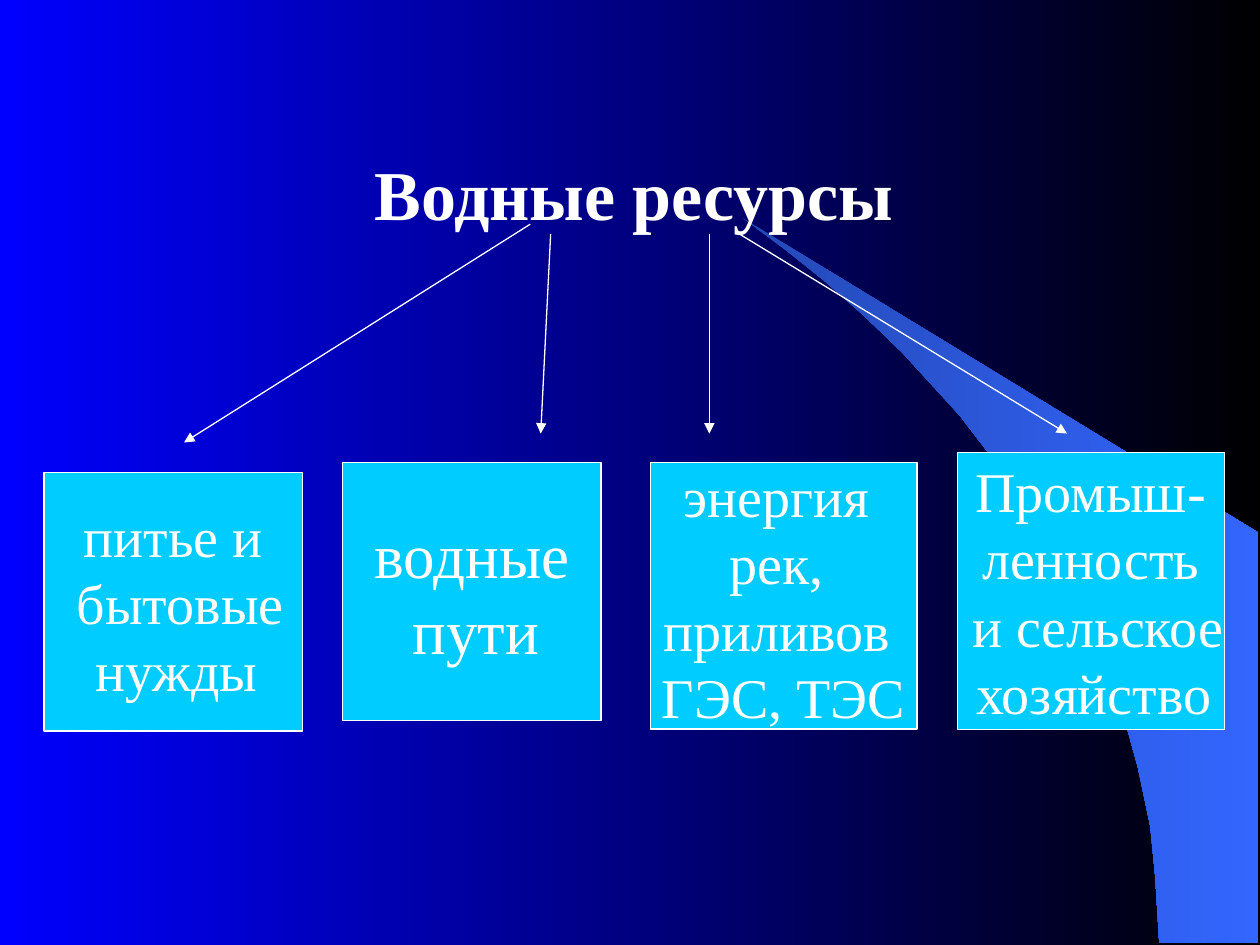
"""Build a slide that shows the four uses of water resources."""
from lxml import etree
from pptx import Presentation
from pptx import util as u
from pptx.dml.color import RGBColor
from pptx.enum import shapes, text
from pptx.oxml import ns

COLORS = {
    "white": "FFFFFF",
    "box": "00CCFF",
    "sky": "0000FF",
    "night": "000000",
    "arc_start": "2449B6",
    "arc_end": "3366FF",
}
FONT = "Times New Roman"
ARC = [
    (23.37, 19), (25.37, 19.02), (25.37, 10.74), (14.96, 4.39), (15.85, 5.05),
    (16.59, 5.64), (17.4, 6.35), (18.19, 7.11), (19.35, 8.38), (20.4, 9.75),
    (21.13, 10.95), (21.79, 12.17), (22.3, 13.41), (22.68, 14.53),
    (22.94, 15.47), (23.19, 16.66), (23.29, 17.68),
]
BOXES = [
    ((0.89, 9.53, 5.21, 5.21), 32, ["питье и", " бытовые", " нужды"], " "),
    ((19.3, 9.12, 5.38, 5.59), 32,
     ["Промыш-", "ленность", " и сельское", " хозяйство"], " "),
    ((6.91, 9.32, 5.21, 5.21), 36, ["водные", " пути"], " "),
    ((13.11, 9.32, 5.38, 5.38), 32,
     ["энергия ", "рек, ", "приливов ", "ГЭС, ТЭС"], ""),
]
ARROWS = [
    (10.69, 4.52, 3.71, 8.92),
    (11.1, 4.72, 10.9, 8.74),
    (14.3, 4.72, 14.3, 8.74),
    (14.91, 4.72, 21.51, 8.74),
]


def color(name):
    """Return the named colour."""
    return RGBColor.from_string(COLORS[name])


def lengths(values):
    """Turn centimetres into slide lengths."""
    return [u.Cm(value) for value in values]


def set_gradient(fill, start, end):
    """Fill from left to right between two named colours."""
    fill.gradient()
    fill.gradient_angle = 0
    for stop, name, position in zip(fill.gradient_stops, (start, end), (0, 1)):
        stop.color.rgb = color(name)
        stop.position = position


def set_line(line):
    """Give a thin white line."""
    line.color.rgb = color("white")
    line.width = u.Pt(0.75)


def add_run(paragraph, content, size=18, bold=False):
    """Append white text to a paragraph."""
    run = paragraph.add_run()
    run.text = content
    run.font.name = FONT
    run.font.size = u.Pt(size)
    run.font.bold = bold
    run.font.color.rgb = color("white")


def add_arc(slide):
    """Draw the curved wedge on the right."""
    points = [lengths(point) for point in ARC]
    builder = slide.shapes.build_freeform(*points[0])
    builder.add_line_segments(points[1:], close=True)
    shape = builder.convert_to_shape()
    shape.shadow.inherit = False
    shape.line.fill.background()
    set_gradient(shape.fill, "arc_start", "arc_end")


def add_title(slide, content):
    """Place the bold centred heading."""
    frame = slide.shapes.add_textbox(*lengths((3.1, 2.92, 19.2, 1.96))).text_frame
    frame.word_wrap = True
    paragraph = frame.paragraphs[0]
    paragraph.alignment = text.PP_ALIGN.CENTER
    paragraph.space_before = u.Pt(5)
    add_run(paragraph, " ")
    add_run(paragraph, content, size=40, bold=True)


def add_box(slide, place, size, lines, ending):
    """Draw a box with one paragraph for each line."""
    shape = slide.shapes.add_shape(shapes.MSO_SHAPE.RECTANGLE, *lengths(place))
    shape.shadow.inherit = False
    shape.fill.solid()
    shape.fill.fore_color.rgb = color("box")
    set_line(shape.line)
    frame = shape.text_frame
    frame.word_wrap = False
    frame.vertical_anchor = text.MSO_ANCHOR.MIDDLE
    for index, line in enumerate(lines):
        paragraph = frame.add_paragraph() if index else frame.paragraphs[0]
        paragraph.alignment = text.PP_ALIGN.CENTER
        add_run(paragraph, line, size=size)
    if ending:
        add_run(paragraph, ending)


def add_arrow(slide, ends):
    """Draw a line with a triangle at its end."""
    connector = slide.shapes.add_connector(
        shapes.MSO_CONNECTOR.STRAIGHT, *lengths(ends))
    set_line(connector.line)
    outline = connector.line._get_or_add_ln()
    etree.SubElement(outline, ns.qn("a:tailEnd"), type="triangle")
    etree.SubElement(connector._element.spPr, ns.qn("a:effectLst"))


def main():
    """Build and save the slide."""
    presentation = Presentation()
    presentation.slide_width, presentation.slide_height = lengths((25.4, 19.05))
    slide = presentation.slides.add_slide(presentation.slide_layouts[6])
    set_gradient(slide.background.fill, "sky", "night")
    add_arc(slide)
    add_title(slide, "Водные ресурсы")
    for box in BOXES:
        add_box(slide, *box)
    for ends in ARROWS:
        add_arrow(slide, ends)
    presentation.save("out.pptx")


if __name__ == "__main__":
    main()
